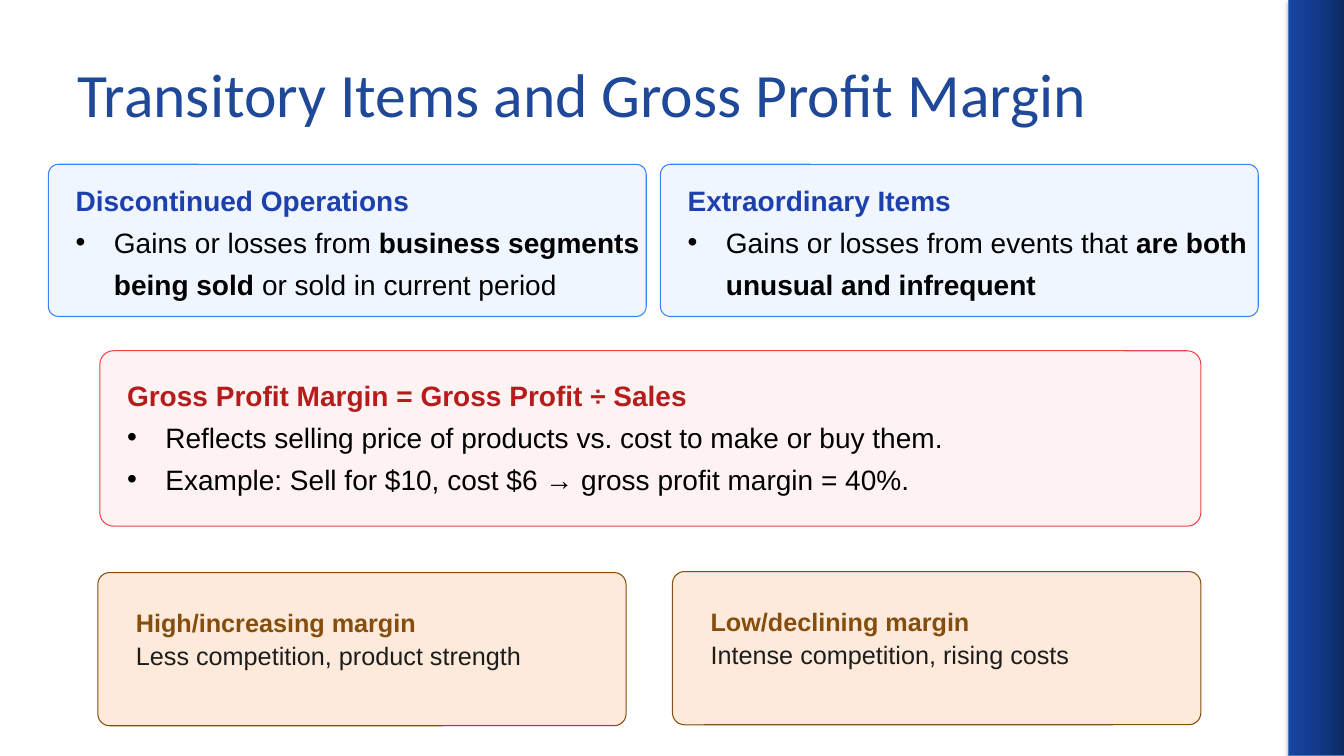
from copy import deepcopy

from lxml import etree
from pptx import Presentation
from pptx.dml.color import RGBColor
from pptx.enum.shapes import MSO_SHAPE
from pptx.enum.text import MSO_ANCHOR, PP_ALIGN
from pptx.oxml.ns import qn
from pptx.util import Pt

PX = 9144  # 100 px to the inch
RECTANGLE, ROUNDED = MSO_SHAPE.RECTANGLE, MSO_SHAPE.ROUNDED_RECTANGLE
MIDDLE, LEFT = MSO_ANCHOR.MIDDLE, PP_ALIGN.LEFT

BLACK = RGBColor(0x00, 0x00, 0x00)
INK = RGBColor(0x1D, 0x1D, 0x1D)
TITLE_BLUE = RGBColor(0x1F, 0x48, 0x99)
BAND_COLORS = (RGBColor(0x0D, 0x29, 0x60), RGBColor(0x12, 0x3A, 0x89),
               RGBColor(0x16, 0x45, 0xA2))
BAND_EDGE = RGBColor(0x4B, 0x7E, 0xBC)
# Each palette: fill, outline, heading
BLUE = (RGBColor(0xEF, 0xF6, 0xFF), RGBColor(0x3B, 0x82, 0xF6), RGBColor(0x1E, 0x40, 0xAF))
RED = (RGBColor(0xFE, 0xF2, 0xF2), RGBColor(0xEF, 0x44, 0x44), RGBColor(0xB7, 0x1C, 0x1C))
BROWN = (RGBColor(0xFD, 0xEA, 0xDA), RGBColor(0x85, 0x4D, 0x0E), RGBColor(0x85, 0x4D, 0x0E))


def emu(*lengths):
    return [length * PX for length in lengths]


def style_run(run, size, color, bold=False, font="Arial"):
    run.font.name, run.font.size = font, Pt(size)
    run.font.bold, run.font.color.rgb = bold, color


def add_panel(slide, box, palette, corner):
    panel = slide.shapes.add_shape(ROUNDED, *emu(*box))
    panel.adjustments[0] = corner
    panel.shadow.inherit = False
    panel.fill.solid()
    panel.fill.fore_color.rgb = palette[0]
    panel.line.color.rgb = palette[1]
    panel.line.width = Pt(0.75)


def add_text(slide, box, inset=None):
    frame = slide.shapes.add_textbox(*emu(*box)).text_frame
    frame.word_wrap = True
    if inset is not None:
        frame.margin_left = frame.margin_right = inset * PX
        frame.margin_top = frame.margin_bottom = inset * PX
    return frame


def add_bullet(paragraph):
    properties = paragraph._p.get_or_add_pPr()
    properties.set("marL", str(38 * PX))
    properties.set("indent", str(-38 * PX))
    etree.SubElement(properties, qn("a:buFont")).set("typeface", "Arial")
    etree.SubElement(properties, qn("a:buChar")).set("char", "•")


def side_band(slide, box):
    band = slide.shapes.add_shape(RECTANGLE, *emu(*box))
    band.line.color.rgb = BAND_EDGE
    band.line.width = Pt(0.75)
    band.fill.gradient()
    band.fill.gradient_angle = 180
    first_stop = band._element.spPr.find(".//" + qn("a:gs"))
    first_stop.addnext(deepcopy(first_stop))
    for index, (stop, color) in enumerate(zip(band.fill.gradient_stops, BAND_COLORS)):
        stop.position = index / 2
        stop.color.rgb = color
    band.shadow.inherit = False
    effects = band._element.spPr.find(qn("a:effectLst"))
    shadow = etree.SubElement(effects, qn("a:outerShdw"), blurRad=str(Pt(3.1)),
                              dist=str(Pt(1.8)), dir="5400000", rotWithShape="0")
    shade = etree.SubElement(shadow, qn("a:srgbClr"), val="000000")
    etree.SubElement(shade, qn("a:alpha"), val="35000")


def slide_title(slide, box, wording):
    title = slide.shapes.title
    title.left, title.top, title.width, title.height = emu(*box)
    frame = title.text_frame
    frame.text = wording
    frame.vertical_anchor = MIDDLE
    frame.paragraphs[0].alignment = LEFT
    style_run(frame.paragraphs[0].runs[0], 44, TITLE_BLUE, font="Calibri")


def topic_card(slide, box, palette, corner, heading, bullets, heading_spacing=None):
    """Panel with a heading and bullets; each bullet is a list of (text, bold)."""
    left, top, width, height = box
    add_panel(slide, box, palette, corner)
    frame = add_text(slide, (left + 27, top + 19, width - 24, height - 40), inset=0)
    frame.text = heading
    frame.paragraphs[0].line_spacing = heading_spacing
    style_run(frame.paragraphs[0].runs[0], 20, palette[2], bold=True)
    for parts in bullets:
        bullet = frame.add_paragraph()
        add_bullet(bullet)
        bullet.line_spacing = Pt(30)
        for wording, bold in parts:
            run = bullet.add_run()
            run.text = wording
            style_run(run, 20, BLACK, bold)


def margin_card(slide, box, heading, causes):
    left, top, _, height = box
    add_panel(slide, box, BROWN, 0.078)
    frame = add_text(slide, (left + 28, top + 37, 450, height - 55))
    frame.text = f"{heading}\n{causes}"
    heading_line, causes_line = frame.paragraphs
    heading_line.line_spacing = causes_line.line_spacing = Pt(16)
    heading_line.space_after = Pt(8)
    style_run(heading_line.runs[0], 18, BROWN[2], bold=True)
    style_run(causes_line.runs[0], 18, INK)


def main():
    deck = Presentation()
    deck.slide_width, deck.slide_height = emu(1333, 750)
    slide = deck.slides.add_slide(deck.slide_layouts[5])

    side_band(slide, (1278, 0, 56, 750))
    slide_title(slide, (67, 30, 1200, 125), "Transitory Items and Gross Profit Margin")

    topic_card(slide, (99, 348, 1092, 174), RED, 0.078,
               "Gross Profit Margin = Gross Profit ÷ Sales",
               [[("Reflects selling price of products vs. cost to make or buy them.", False)],
                [("Example: Sell for $10, cost $6 → gross profit margin = 40%.", False)]],
               heading_spacing=Pt(30))

    transitory_items = [
        ("Discontinued Operations",
         [("Gains or losses from", False), (" business segments being sold ", True),
          ("or sold in current period", False)]),
        ("Extraordinary Items",
         [("Gains or losses from events that ", False),
          ("are both unusual and infrequent", True)]),
    ]
    for column, (heading, definition) in enumerate(transitory_items):
        topic_card(slide, (48 + 607 * column, 163, 593, 151), BLUE, 0.067,
                   heading, [definition])

    margin_trends = [
        ("High/increasing margin", "Less competition, product strength"),
        ("Low/declining margin", "Intense competition, rising costs"),
    ]
    for column, (heading, causes) in enumerate(margin_trends):
        margin_card(slide, (97 + 570 * column, 568 - column, 524, 152), heading, causes)

    deck.save("out.pptx")


if __name__ == "__main__":
    main()
